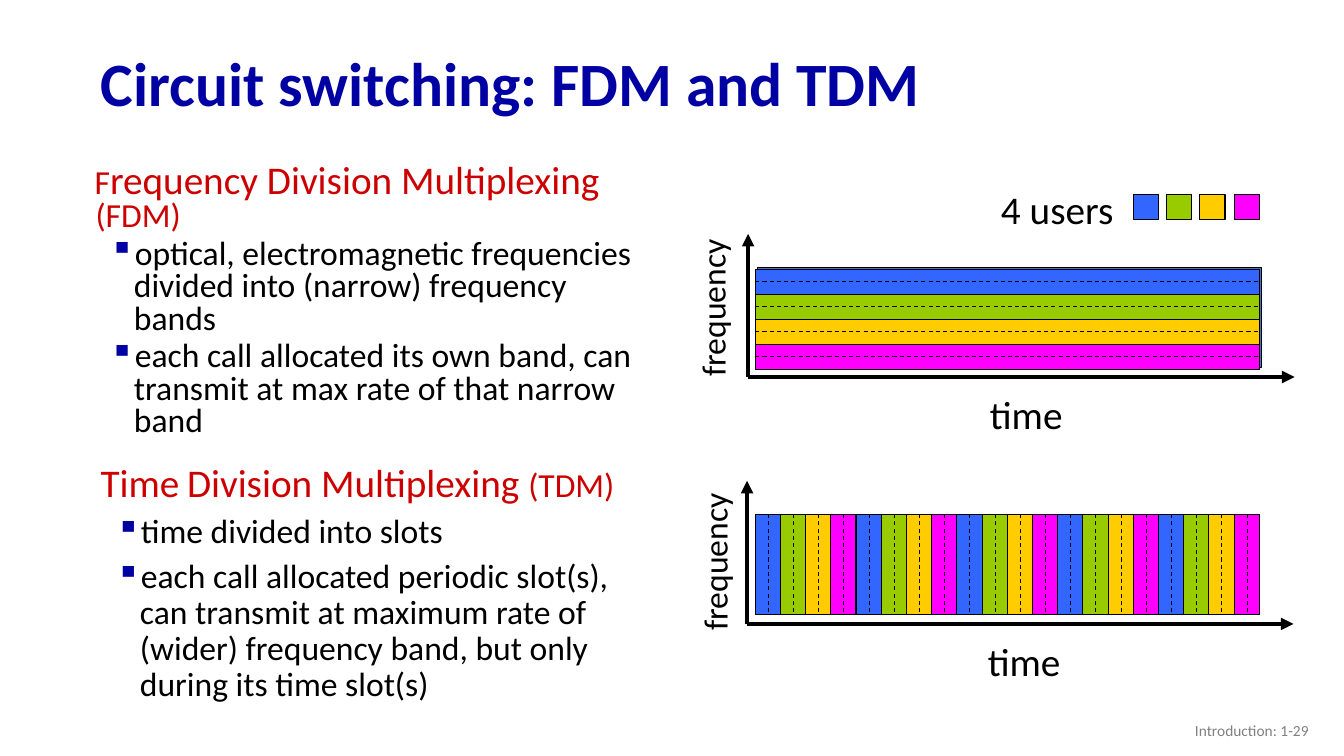
"""Build the slide that compares FDM and TDM circuit switching."""

from dataclasses import dataclass

from lxml import etree
from pptx import Presentation
from pptx.dml.color import RGBColor
from pptx.enum.dml import MSO_LINE
from pptx.enum.shapes import MSO_CONNECTOR, MSO_SHAPE
from pptx.enum.text import MSO_ANCHOR, MSO_AUTO_SIZE, PP_ALIGN
from pptx.oxml.ns import qn
from pptx.slide import Slide
from pptx.text.text import TextFrame, _Paragraph
from pptx.util import Emu, Pt

EMU_PER_PX = 9144
DASH = MSO_LINE.DASH
STRAIGHT = MSO_CONNECTOR.STRAIGHT
RECTANGLE = MSO_SHAPE.RECTANGLE
TOP, MIDDLE = MSO_ANCHOR.TOP, MSO_ANCHOR.MIDDLE
LEFT, RIGHT = PP_ALIGN.LEFT, PP_ALIGN.RIGHT
GROW = MSO_AUTO_SIZE.SHAPE_TO_FIT_TEXT


@dataclass(frozen=True)
class Theme:
    font: str = "Calibri"
    navy: str = "0000A3"
    red: str = "CC0000"
    black: str = "000000"
    gray: str = "808080"
    frame: str = "4472C4"
    users: tuple[str, ...] = ("3366FF", "99CC00", "FFCC00", "FF00FF")
    title: int = 44
    heading: int = 28
    body: int = 24
    footer: int = 11
    hairline: float = 0.75
    axis: float = 3


@dataclass(frozen=True)
class Box:
    left: int
    top: int
    width: int
    height: int


@dataclass(frozen=True)
class Label:
    text: str
    box: Box
    size: int
    color: str
    bold: bool = False
    align: PP_ALIGN = LEFT
    anchor: MSO_ANCHOR = TOP
    wrap: bool = True
    rotation: int = 0
    line_spacing: float = 1.0


@dataclass(frozen=True)
class Topic:
    box: Box
    heading: tuple[tuple[str, int], ...]
    points: tuple[str, ...]
    line_spacing: float
    space_before: int


@dataclass(frozen=True)
class Multiplex:
    channels: Box
    count: int
    sliced_in_time: bool
    dash_offset: int
    axis_left: int
    axis_top: int
    frequency: Box
    time: Box


THEME = Theme()
SLIDE_SIZE = (1333, 750)
AXIS_HEIGHT, AXIS_WIDTH = 142, 542
SLICE = 25
FDM_FRAME = Box(751, 265, 500, 100)

LABELS = (
    Label("Circuit switching: FDM and TDM", Box(90, 37, 1150, 98), THEME.title,
          THEME.navy, bold=True, anchor=MIDDLE, line_spacing=0.9),
    Label("Introduction: 1-29", Box(1008, 705, 300, 40), THEME.footer,
          THEME.gray, align=RIGHT, anchor=MIDDLE),
    Label("4 users", Box(983, 179, 133, 57), THEME.heading, THEME.black, wrap=False),
)

FDM = Multiplex(Box(749, 267, 500, 100), 4, False, 12, 742, 232,
                Box(628, 279, 158, 51), Box(972, 382, 93, 57))
TDM = Multiplex(Box(749, 510, 500, 100), 20, True, 13, 741, 477,
                Box(630, 531, 158, 51), Box(970, 627, 93, 57))

TOPICS = (
    Topic(Box(84, 158, 576, 314),
          (("F", THEME.body), ("requency Division Multiplexing ", THEME.heading),
           ("(FDM)", THEME.body)),
          ("optical, electromagnetic frequencies divided into (narrow) frequency bands",
           "each call allocated its own band, can transmit at max rate of that narrow band"),
          0.8, 4),
    Topic(Box(90, 455, 577, 270),
          (("Time", THEME.heading), (" ", THEME.body),
           ("Division Multiplexing ", THEME.heading), ("(TDM)", THEME.body)),
          ("time divided into slots",
           "each call allocated periodic slot(s), can transmit at maximum rate of "
           "(wider) frequency band, but only during its time slot(s)"),
          0.9, 6),
)


def px(length: int) -> Emu:
    """Turn a length in px into EMU."""
    return Emu(length * EMU_PER_PX)


def place(box: Box) -> tuple[Emu, Emu, Emu, Emu]:
    """Give the four EMU lengths of a box."""
    return px(box.left), px(box.top), px(box.width), px(box.height)


def add_run(paragraph: _Paragraph, text: str, size: int, color: str,
            bold: bool = False) -> None:
    """Append a formatted run to a paragraph."""
    run = paragraph.add_run()
    run.text = text
    run.font.name = THEME.font
    run.font.size = Pt(size)
    run.font.bold = bold
    run.font.color.rgb = RGBColor.from_string(color)


def add_label(slide: Slide, label: Label) -> None:
    """Draw a single line of text."""
    holder = slide.shapes.add_textbox(*place(label.box))
    holder.rotation = label.rotation
    frame = holder.text_frame
    frame.word_wrap = label.wrap
    frame.vertical_anchor = label.anchor
    if not label.wrap:
        frame.auto_size = GROW
    line = frame.paragraphs[0]
    line.alignment = label.align
    line.line_spacing = label.line_spacing
    add_run(line, label.text, label.size, label.color, label.bold)


def add_block(slide: Slide, box: Box, color: str) -> None:
    """Draw a filled rectangle with a thin outline."""
    block = slide.shapes.add_shape(RECTANGLE, *place(box))
    block.shadow.inherit = False
    block.fill.solid()
    block.fill.fore_color.rgb = RGBColor.from_string(color)
    block.line.color.rgb = RGBColor.from_string(THEME.black)
    block.line.width = Pt(THEME.hairline)


def add_line(slide: Slide, start: tuple[int, int], end: tuple[int, int],
             width: float = THEME.hairline, dashed: bool = False,
             arrow: bool = False) -> None:
    """Draw a straight black line, dashed or with an arrowhead on request."""
    line = slide.shapes.add_connector(STRAIGHT, *map(px, start + end))
    line.line.color.rgb = RGBColor.from_string(THEME.black)
    line.line.width = Pt(width)
    if dashed:
        line.line.dash_style = DASH
    properties = line.element.spPr
    if arrow:
        etree.SubElement(properties.find(qn("a:ln")), qn("a:tailEnd"), type="triangle")
    etree.SubElement(properties, qn("a:effectLst"))


def add_axes(slide: Slide, plot: Multiplex) -> None:
    """Draw the frequency and time axes with their names."""
    origin = (plot.axis_left, plot.axis_top + AXIS_HEIGHT)
    add_line(slide, origin, (plot.axis_left, plot.axis_top), THEME.axis, arrow=True)
    add_line(slide, origin, (plot.axis_left + AXIS_WIDTH, origin[1]), THEME.axis, arrow=True)
    add_label(slide, Label("frequency", plot.frequency, THEME.body, THEME.black,
                           wrap=False, rotation=270))
    add_label(slide, Label("time", plot.time, THEME.heading, THEME.black, wrap=False))


def add_channels(slide: Slide, plot: Multiplex) -> None:
    """Draw the users' bands or slots, then their borders and dashed centres."""
    area = plot.channels
    for index in range(plot.count):
        offset = index * SLICE
        channel = (Box(area.left + offset, area.top, SLICE, area.height)
                   if plot.sliced_in_time
                   else Box(area.left, area.top + offset, area.width, SLICE))
        add_block(slide, channel, THEME.users[index % len(THEME.users)])
    borders = [(index * SLICE, False) for index in range(1, plot.count)]
    centres = [(index * SLICE + plot.dash_offset, True) for index in range(plot.count)]
    for offset, dashed in borders + centres:
        if plot.sliced_in_time:
            x = area.left + offset
            add_line(slide, (x, area.top), (x, area.top + area.height), dashed=dashed)
        else:
            y = area.top + offset
            add_line(slide, (area.left, y), (area.left + area.width, y), dashed=dashed)


def add_topic_line(frame: TextFrame, topic: Topic, first: bool) -> _Paragraph:
    """Start the heading or a bulleted point of a topic."""
    line = frame.paragraphs[0] if first else frame.add_paragraph()
    line.line_spacing = topic.line_spacing
    line.space_before = Pt(topic.space_before)
    properties = line._p.get_or_add_pPr()
    margin, indent = (1, -1) if first else (39, -24)
    properties.set("marL", str(px(margin)))
    properties.set("indent", str(px(indent)))
    if not first:
        bullet_color = etree.SubElement(properties, qn("a:buClr"))
        etree.SubElement(bullet_color, qn("a:srgbClr"), val=THEME.navy)
        etree.SubElement(properties, qn("a:buChar"), char="▪")
    return line


def add_topic(slide: Slide, topic: Topic) -> None:
    """Write a red heading with its bulleted points."""
    frame = slide.shapes.add_textbox(*place(topic.box)).text_frame
    frame.word_wrap = True
    heading = add_topic_line(frame, topic, first=True)
    for text, size in topic.heading:
        add_run(heading, text, size, THEME.red)
    for point in topic.points:
        add_run(add_topic_line(frame, topic, first=False), point, THEME.body, THEME.black)


def main() -> None:
    """Build and save the slide."""
    deck = Presentation()
    deck.slide_width, deck.slide_height = map(px, SLIDE_SIZE)
    slide = deck.slides.add_slide(deck.slide_layouts[6])
    for label in LABELS:
        add_label(slide, label)
    add_block(slide, FDM_FRAME, THEME.frame)
    for plot in (FDM, TDM):
        add_axes(slide, plot)
        add_channels(slide, plot)
    for index, color in enumerate(THEME.users):
        add_block(slide, Box(1124 + index * 100 // 3, 193, SLICE, SLICE), color)
    for topic in TOPICS:
        add_topic(slide, topic)
    deck.save("out.pptx")


if __name__ == "__main__":
    main()
